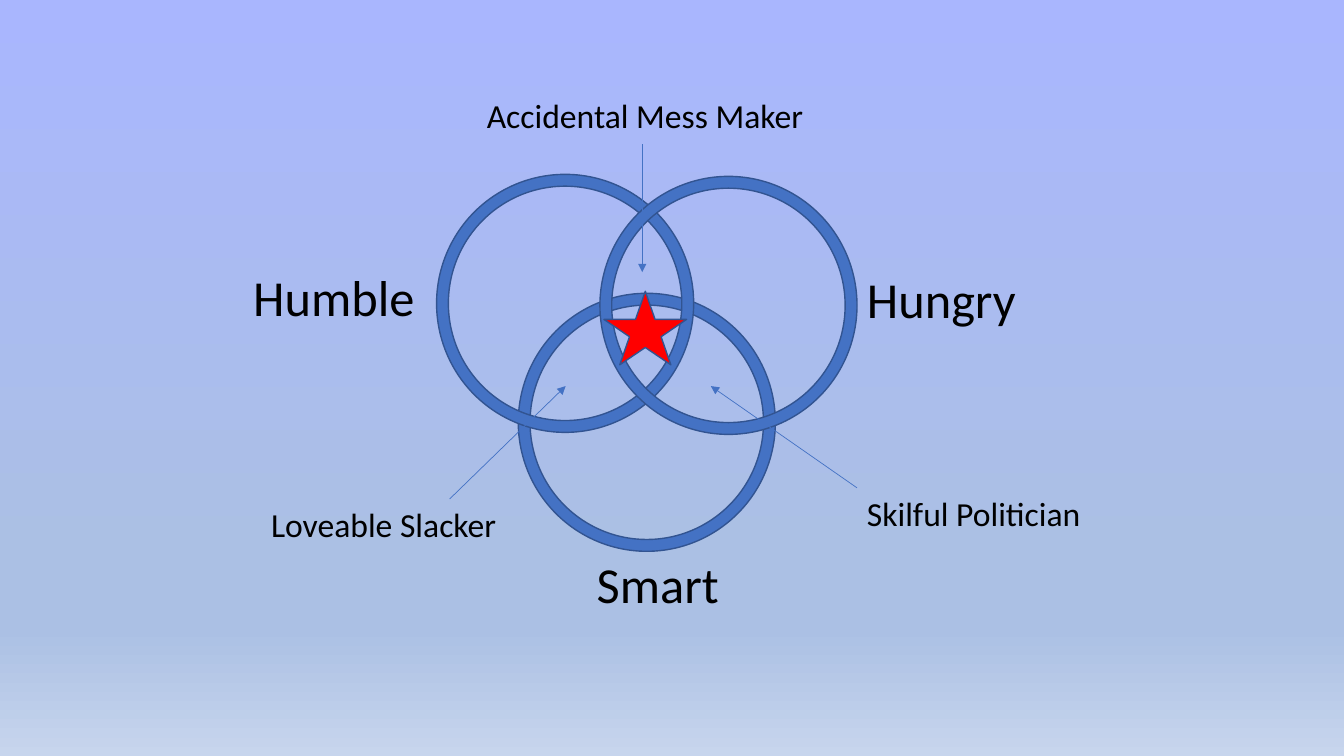
from copy import deepcopy

from lxml import etree
from pptx import Presentation
from pptx.dml.color import RGBColor
from pptx.enum.shapes import MSO_CONNECTOR, MSO_SHAPE
from pptx.enum.text import MSO_AUTO_SIZE, PP_ALIGN
from pptx.oxml.ns import qn
from pptx.util import Inches, Pt

DONUT, STAR = MSO_SHAPE.DONUT, MSO_SHAPE.STAR_5_POINT
STRAIGHT = MSO_CONNECTOR.STRAIGHT
LEFT, RIGHT = PP_ALIGN.LEFT, PP_ALIGN.RIGHT
FIT = MSO_AUTO_SIZE.SHAPE_TO_FIT_TEXT

COLORS = {
    "ring": "4472C4", "outline": "325491", "star": "FF0000", "text": "000000",
    "sky": "A9B6FE", "haze": "ABC0E4", "pale": "C7D5ED",
}
BACKGROUND = [(0, "sky"), (0.74, "haze"), (0.83, "haze"), (1, "pale")]
RING_SIZE = (2.55, 2.56)


def rgb(name):
    return RGBColor.from_string(COLORS[name])


class VennSlide:
    """Holds the font and the slide being drawn; lengths are in inches."""

    def __init__(self, prs, font="Calibri"):
        self.font = font
        self.slide = prs.slides.add_slide(prs.slide_layouts[6])
        self.shapes = self.slide.shapes

    def background(self, stops):
        fill = self.slide.background.fill
        fill.gradient()
        fill.gradient_angle = 270
        gs_list = next(self.slide.element.iter(qn("a:gsLst")))
        while len(gs_list) < len(stops):
            gs_list.append(deepcopy(gs_list[0]))
        for stop, (position, color) in zip(fill.gradient_stops, stops):
            stop.position = position
            stop.color.rgb = rgb(color)

    def shape(self, kind, x, y, w, h, color):
        sp = self.shapes.add_shape(kind, Inches(x), Inches(y), Inches(w), Inches(h))
        sp.shadow.inherit = False
        sp.fill.solid()
        sp.fill.fore_color.rgb = rgb(color)
        sp.line.color.rgb = rgb("outline")
        sp.line.width = Pt(1)
        return sp

    def ring(self, x, y):
        self.shape(DONUT, x, y, *RING_SIZE, "ring").adjustments[0] = 0.046

    def text(self, text, x, y, w, h, size=24, align=LEFT, wrap=True):
        tf = self.shapes.add_textbox(Inches(x), Inches(y), Inches(w), Inches(h)).text_frame
        tf.word_wrap = wrap
        tf.auto_size = FIT
        p = tf.paragraphs[0]
        p.alignment = align
        r = p.add_run()
        r.text = text
        r.font.name = self.font
        r.font.size = Pt(size)
        r.font.color.rgb = rgb("text")

    def arrow(self, x1, y1, x2, y2):
        line = self.shapes.add_connector(
            STRAIGHT, Inches(x1), Inches(y1), Inches(x2), Inches(y2))
        line.line.color.rgb = rgb("ring")
        line.line.width = Pt(0.5)
        ln = line.line._get_or_add_ln()
        etree.SubElement(ln, qn("a:tailEnd"), type="triangle")
        etree.SubElement(line.element.spPr, qn("a:effectLst"))


def main():
    prs = Presentation()
    prs.slide_width, prs.slide_height = Inches(13.33), Inches(7.5)
    s = VennSlide(prs)
    s.background(BACKGROUND)

    for x, y in [(5.14, 2.91), (4.33, 1.73), (5.95, 1.75)]:
        s.ring(x, y)

    s.text("Humble", 2.21, 2.59, 2, 0.71, size=36, align=RIGHT)
    s.text("Hungry", 8.5, 2.61, 1.69, 0.71, size=36, wrap=False)
    s.text("Smart", 5.82, 5.44, 2.55, 0.71, size=36)

    for ends in [(6.37, 1.43, 6.37, 2.7), (8.5, 4.84, 7.05, 3.83), (4.46, 4.95, 5.61, 3.83)]:
        s.arrow(*ends)

    s.text("Accidental Mess Maker", 4.73, 0.89, 3.36, 0.5)
    s.text("Loveable Slacker", 2.59, 4.95, 2.55, 0.5)
    s.text("Skilful Politician", 8.5, 4.84, 2.5, 0.5)

    s.shape(STAR, 5.99, 2.89, 0.82, 0.73, "star")
    prs.save("out.pptx")


if __name__ == "__main__":
    main()
